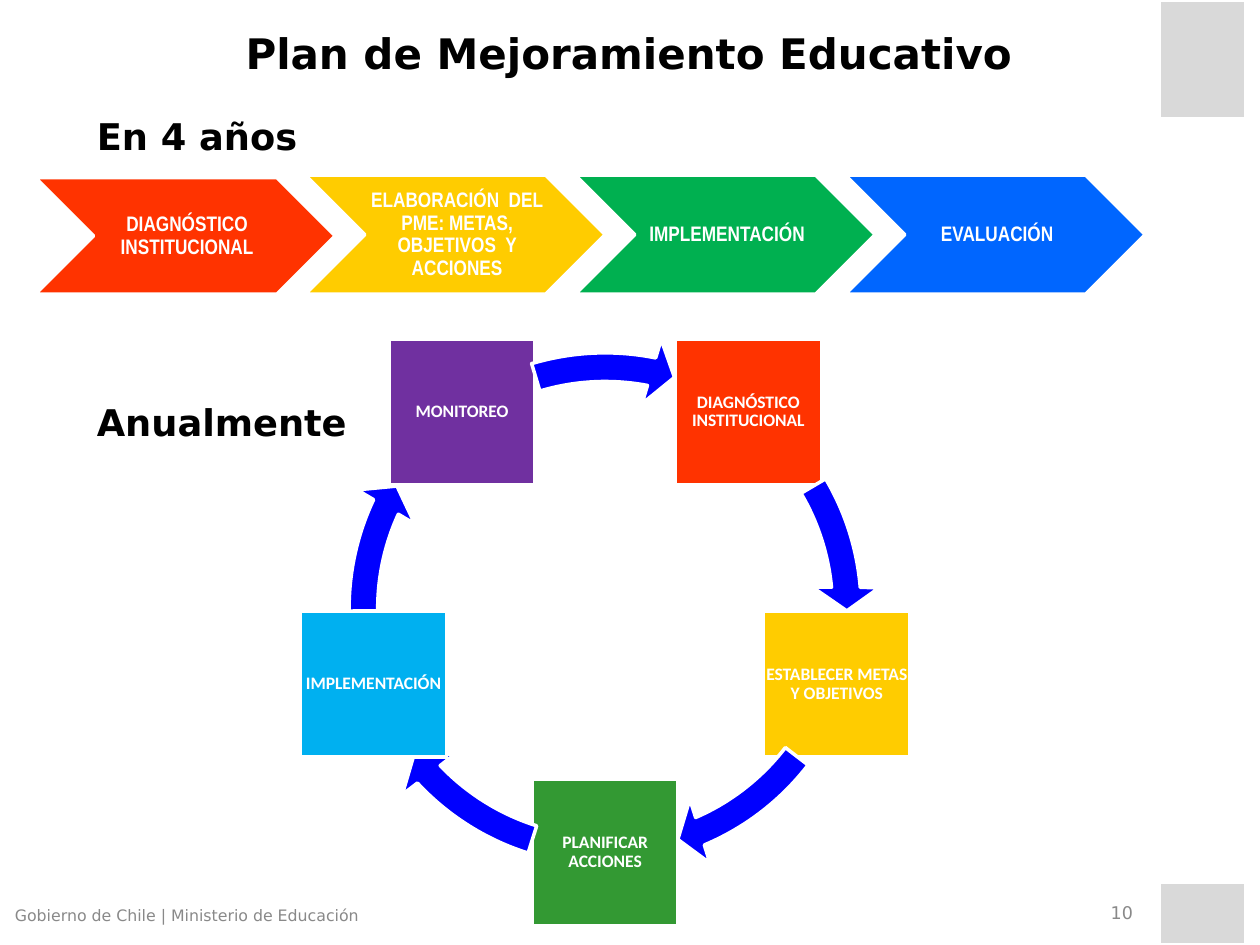
import math
from dataclasses import dataclass

import pptx
import pptx.dml.color
import pptx.enum.shapes
import pptx.enum.text
import pptx.util

SHAPE = pptx.enum.shapes.MSO_SHAPE
ALIGN = pptx.enum.text.PP_ALIGN
ANCHOR = pptx.enum.text.MSO_ANCHOR
COLUMNS, ROWS = 100, 75


@dataclass(frozen=True)
class Theme:
    """Colours, fonts and type sizes of the slide."""
    ink: str = "000000"
    paper: str = "FFFFFF"
    muted: str = "898989"
    corner: str = "D9D9D9"
    red: str = "FF3300"
    yellow: str = "FFCC00"
    green: str = "00B050"
    blue: str = "0066FF"
    leaf: str = "339933"
    sky: str = "00B0F0"
    purple: str = "7030A0"
    arrow: str = "0000FF"
    main_font: str = "DejaVu Sans"
    phase_font: str = "Arial Narrow"
    step_font: str = "Calibri"
    title: int = 24
    heading: int = 21
    phase: int = 12
    small: int = 10
    footer: int = 9
    outline: int = 2


def rgb(code):
    """Return the colour of a hex code."""
    return pptx.dml.color.RGBColor.from_string(code)


def write_text(frame, text, *, size, font, color, bold=True, align=ALIGN.CENTER,
               anchor=ANCHOR.MIDDLE, insets=(0.1, 0.05, 0.1, 0.05), spacing=1.0, wrap=True):
    """Fill a text frame with one formatted paragraph."""
    frame.word_wrap = wrap
    frame.vertical_anchor = anchor
    (frame.margin_left, frame.margin_top,
     frame.margin_right, frame.margin_bottom) = map(pptx.util.Inches, insets)
    paragraph = frame.paragraphs[0]
    paragraph.alignment = align
    paragraph.line_spacing = spacing
    run = paragraph.add_run()
    run.text = text
    run.font.size = pptx.util.Pt(size)
    run.font.name = font
    run.font.bold = bold
    run.font.color.rgb = rgb(color)


class Board:
    """Draws styled elements on a slide measured in grid columns and rows."""

    def __init__(self, deck, theme):
        """Add a blank slide to the deck."""
        self.theme = theme
        self.slide = deck.slides.add_slide(deck.slide_layouts[6])
        self.column = deck.slide_width / COLUMNS
        self.row = deck.slide_height / ROWS

    def place(self, left, top, width, height):
        """Convert grid units to slide lengths."""
        return (round(left * self.column), round(top * self.row),
                round(width * self.column), round(height * self.row))

    def block(self, kind, area, fill):
        """Add a filled and outlined preset shape."""
        block = self.slide.shapes.add_shape(kind, *self.place(*area))
        block.shadow.inherit = False
        block.fill.solid()
        block.fill.fore_color.rgb = rgb(fill)
        block.line.color.rgb = rgb(self.theme.paper)
        block.line.width = pptx.util.Pt(self.theme.outline)
        return block

    def label(self, text, area, **style):
        """Add a text box in the main font."""
        box = self.slide.shapes.add_textbox(*self.place(*area))
        write_text(box.text_frame, text, font=self.theme.main_font, **style)

    def phase(self, text, area, fill):
        """Add a chevron of the four-year plan."""
        chevron = self.block(SHAPE.CHEVRON, area, fill)
        write_text(chevron.text_frame, text, size=self.theme.phase,
                   font=self.theme.phase_font, color=self.theme.paper,
                   insets=(0.05, 0.02, 0.02, 0.02), spacing=0.9)

    def step(self, text, area, fill):
        """Add a square of the yearly cycle."""
        square = self.block(SHAPE.RECTANGLE, area, fill)
        write_text(square.text_frame, text, size=self.theme.small,
                   font=self.theme.step_font, color=self.theme.paper,
                   insets=(0.01,) * 4, spacing=0.9)

    def arc(self, area, start, end):
        """Add a circular arrow between two angles in degrees."""
        arrow = self.block(SHAPE.CIRCULAR_ARROW, area, self.theme.arrow)
        settings = (0.052, 5.6 * 0.6, end * 0.6, start * 0.6, 0.061)
        for index, value in enumerate(settings):
            arrow.adjustments[index] = value


def main():
    """Build and save the slide."""
    deck = pptx.Presentation()
    deck.slide_width, deck.slide_height = pptx.util.Inches(10), pptx.util.Inches(7.5)
    theme = Theme()
    board = Board(deck, theme)

    for top, height in ((0, 9.4), (70, 5)):
        board.block(SHAPE.RECTANGLE, (92, top, 6.9, height), theme.corner)

    board.label("10", (67.6, 71.4, 23.3, 2.1), size=theme.small, color=theme.muted,
                bold=False, align=ALIGN.RIGHT)
    board.label("Gobierno de Chile | Ministerio de Educación", (0.2, 71.4, 31.7, 2.7),
                size=theme.footer, color=theme.muted, bold=False, align=ALIGN.LEFT,
                anchor=ANCHOR.TOP)
    board.label("Plan de Mejoramiento Educativo", (0, 0, 99.8, 8.4),
                size=theme.title, color=theme.ink)

    phases = (
        ("DIAGNÓSTICO INSTITUCIONAL", theme.red, 14.1),
        ("ELABORACIÓN  DEL PME: METAS, OBJETIVOS  Y ACCIONES", theme.yellow, 13.9),
        ("IMPLEMENTACIÓN", theme.green, 13.9),
        ("EVALUACIÓN", theme.blue, 13.9),
    )
    for index, (text, fill, top) in enumerate(phases):
        board.phase(text, (2.8 + 21.43 * index, top, 23.8, 23.35 - top), fill)

    steps = (
        ("DIAGNÓSTICO INSTITUCIONAL", theme.red, 329.45, 354.88),
        ("ESTABLECER METAS Y OBJETIVOS", theme.yellow, 37.57, 66.9),
        ("PLANIFICAR ACCIONES", theme.leaf, 107.5, 136.83),
        ("IMPLEMENTACIÓN", theme.sky, 179.52, 204.95),
        ("MONITOREO", theme.purple, 253.32, 281.08),
    )
    center_x, center_y, radius, side, ring = 48.03, 48.33, 19.33, 11.6, 43.7
    ring_area = (center_x - ring / 2, center_y - ring / 2, ring, ring)
    for index, (text, fill, start, end) in enumerate(steps):
        angle = math.radians(-54 + 360 / len(steps) * index)
        left = center_x + radius * math.cos(angle) - side / 2
        top = center_y + radius * math.sin(angle) - side / 2
        board.step(text, (left, top, side, side), fill)
        board.arc(ring_area, start, end)

    for text, top, width in (("En 4 años", 8.5, 18.1), ("Anualmente", 31.2, 22)):
        board.label(text, (6.7, top, width, 4.5), size=theme.heading, color=theme.ink,
                    align=ALIGN.LEFT, anchor=ANCHOR.TOP, wrap=False)

    deck.save("out.pptx")


if __name__ == "__main__":
    main()
